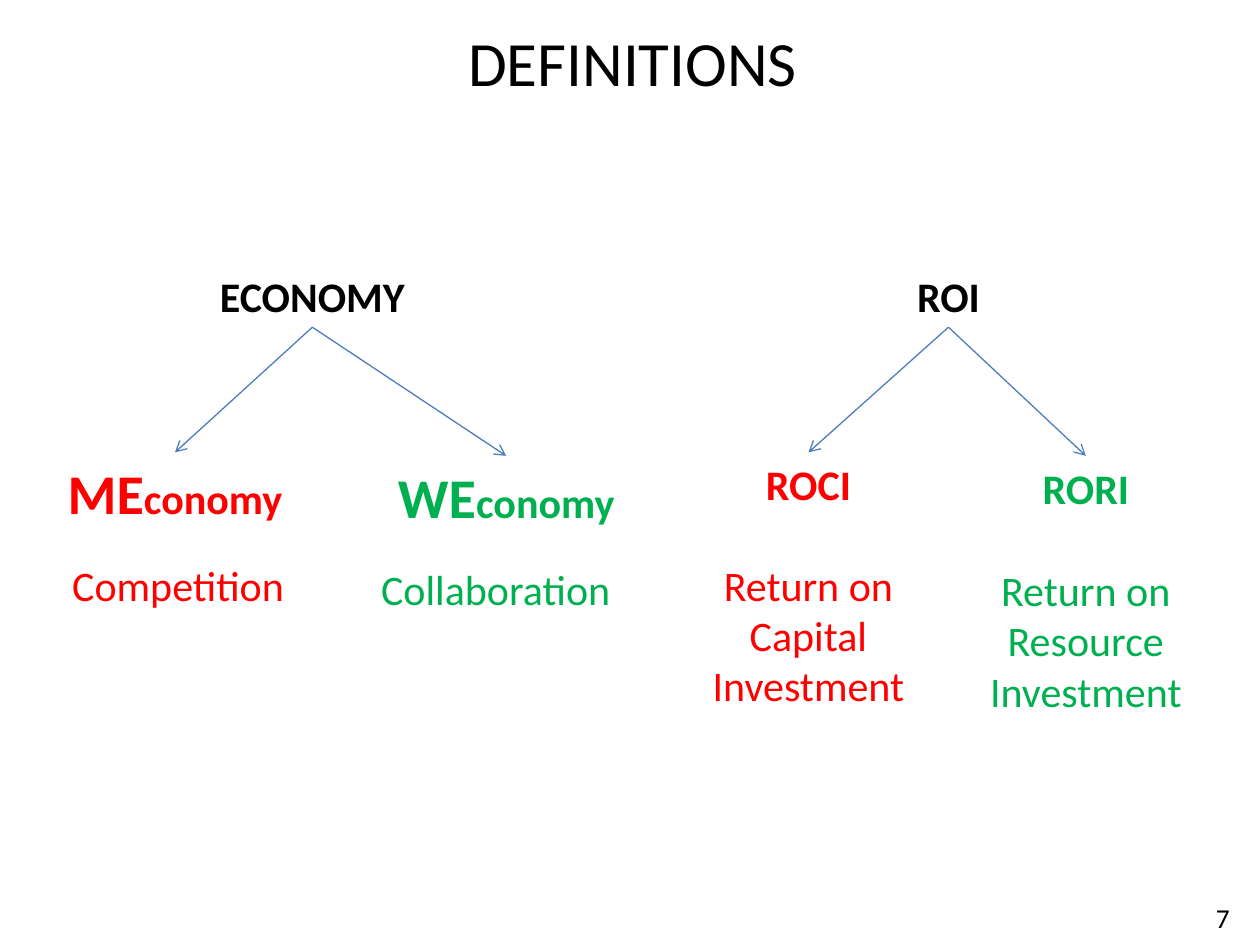
"""Build the DEFINITIONS slide with two branching terms."""
from lxml import etree
from pptx import Presentation
from pptx import util as u
from pptx.dml import color
from pptx.enum import shapes, text
from pptx.oxml import ns

BLACK = color.RGBColor(0x00, 0x00, 0x00)
RED = color.RGBColor(0xFF, 0x00, 0x00)
GREEN = color.RGBColor(0x00, 0xB0, 0x50)
BLUE = color.RGBColor(0x4B, 0x7E, 0xBC)
NARROW, WIDE = 138, 153.5
LINE_HEIGHT = 36

# Each tree: heading, heading left, branches.
# Each branch: colour, term spans, term place, meaning lines, meaning place.
TREES = [
    ("ECONOMY", 109.5, [
        (RED, [("ME", 32), ("conomy", 24)], (31, 258.5, NARROW, 46),
         ["Competition"], (25, 316, WIDE, 36)),
        (GREEN, [("WE", 32), ("conomy", 24)], (212.5, 260.5, WIDE, 46),
         ["Collaboration"], (206.5, 318.5, WIDE, 36)),
    ]),
    ("ROI", 473, [
        (RED, [("ROCI", 24)], (393, 258.5, NARROW, LINE_HEIGHT),
         ["Return on", "Capital Investment"], (393, 316, NARROW, 94)),
        (GREEN, [("RORI", 24)], (551.5, 260.5, NARROW, LINE_HEIGHT),
         ["Return on", "Resource Investment"], (551.5, 319, NARROW, 94)),
    ]),
]


def set_values(target, values):
    """Set every attribute named in values on the target."""
    for name, value in values.items():
        setattr(target, name, value)


def place(box, area):
    """Move and size a box, given its area in points."""
    names = ("left", "top", "width", "height")
    set_values(box, dict(zip(names, map(u.Pt, area))))


def write(box, paragraphs, colour, bold=False, anchor=text.MSO_ANCHOR.TOP):
    """Fill a box with centred paragraphs of (wording, size) spans."""
    frame = box.text_frame
    set_values(frame, {"word_wrap": True, "vertical_anchor": anchor,
                       "auto_size": text.MSO_AUTO_SIZE.NONE})
    for index, spans in enumerate(paragraphs):
        para = frame.add_paragraph() if index else frame.paragraphs[0]
        para.alignment = text.PP_ALIGN.CENTER
        for wording, size in spans:
            span = para.add_run()
            span.text = wording
            set_values(span.font, {"name": "Calibri", "size": u.Pt(size), "bold": bold})
            span.font.color.rgb = colour


def add_label(page, area, paragraphs, colour, **style):
    """Add a text box and return it."""
    box = page.shapes.add_textbox(*map(u.Pt, area))
    write(box, paragraphs, colour, **style)
    return box


def add_arrow(page, heading, term):
    """Join the bottom of a heading to the top of a term."""
    arrow = page.shapes.add_connector(shapes.MSO_CONNECTOR.STRAIGHT, 0, 0, 0, 0)
    arrow.begin_connect(heading, 2)
    arrow.end_connect(term, 0)
    arrow.line.width = u.Pt(0.75)
    arrow.line.color.rgb = BLUE
    tip = etree.SubElement(arrow.line._get_or_add_ln(), ns.qn("a:tailEnd"))
    tip.set("type", "arrow")
    etree.SubElement(arrow._element.spPr, ns.qn("a:effectLst"))


def add_tree(page, name, left, branches):
    """Add a heading with its coloured terms, meanings and arrows."""
    heading = add_label(page, (left, 151, NARROW, LINE_HEIGHT), [[(name, 24)]],
                        BLACK, bold=True)
    for colour, spans, term_area, lines, meaning_area in branches:
        term = add_label(page, term_area, [spans], colour, bold=True)
        add_label(page, meaning_area, [[(line, 24)] for line in lines], colour)
        add_arrow(page, heading, term)


def main():
    """Build and save the deck."""
    deck = Presentation()
    set_values(deck, {"slide_width": u.Pt(720), "slide_height": u.Pt(540)})
    page = deck.slides.add_slide(deck.slide_layouts[5])
    title = page.shapes.title
    place(title, (14.5, 10, 694, 51))
    write(title, [[("DEFINITIONS", 36)]], BLACK)
    for tree in TREES:
        add_tree(page, *tree)
    add_label(page, (677.5, 508.5, 42.5, 31.5), [[("7", 15.6)]], BLACK,
              anchor=text.MSO_ANCHOR.MIDDLE)
    deck.save("out.pptx")


if __name__ == "__main__":
    main()
